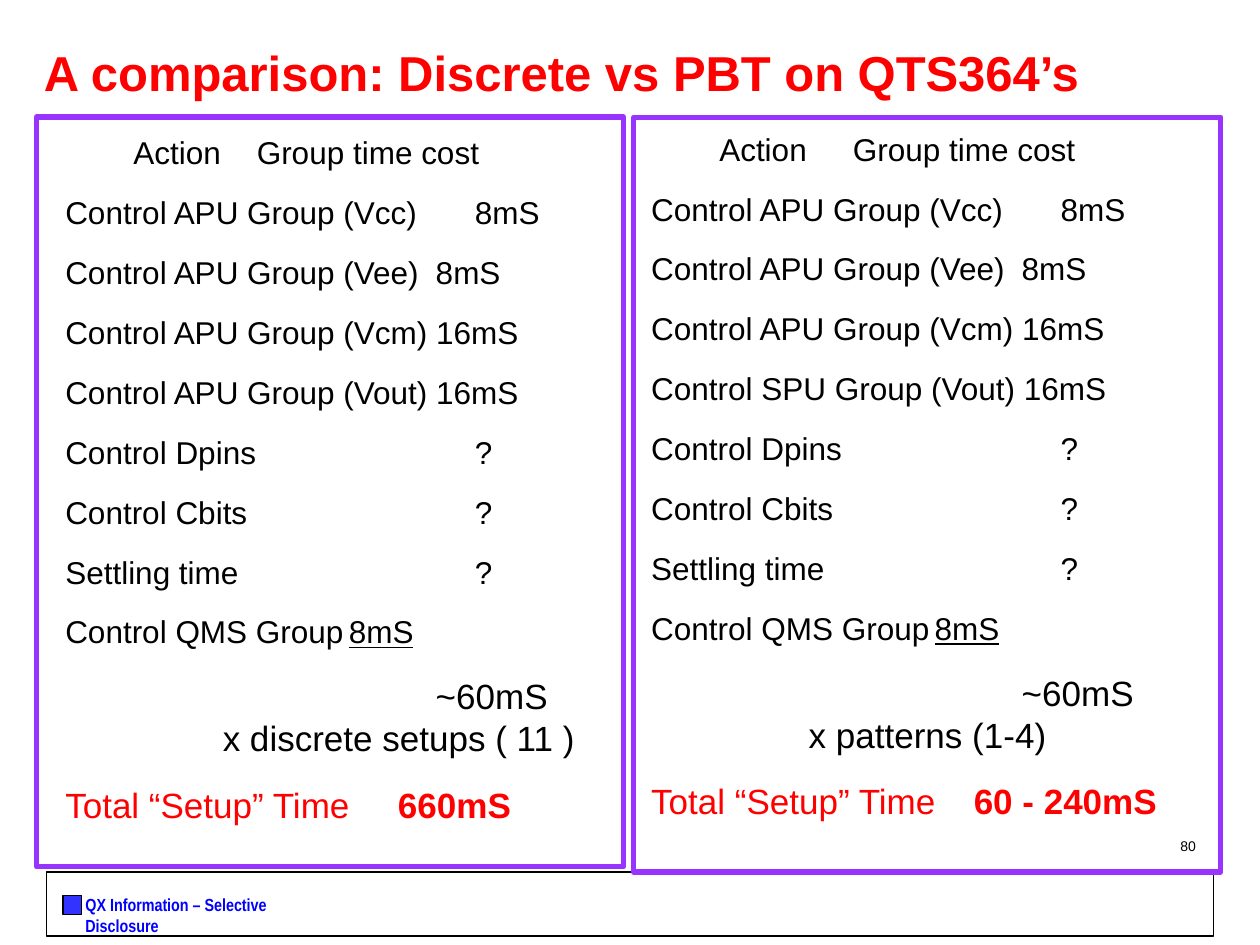
from pptx import Presentation, util as u
from pptx.dml.color import RGBColor
from pptx.enum import shapes, text
from pptx.oxml.ns import qn
from lxml import etree

COLORS = dict(red="FF0000", black="000000", purple="9933FF",
              blue="0000FF", marker="3333FF")
WIDTH, HEIGHT = u.Inches(10), u.Inches(7.5)
PANEL_STEP = 47.4
BODY = dict(size=u.Pt(18))
SUM = dict(size=u.Pt(20))
TOTAL = dict(size=u.Pt(20), color="red")


def area(x, y, w, h):
    """Turn percentages of the slide's size into lengths."""
    return [int(share * full / 100)
            for share, full in zip((x, y, w, h), (WIDTH, HEIGHT) * 2)]


def add_rect(s, box, line, points, fill=None):
    sp = s.shapes.add_shape(shapes.MSO_SHAPE.RECTANGLE, *area(*box))
    sp.shadow.inherit = False
    if fill:
        sp.fill.solid()
        sp.fill.fore_color.rgb = RGBColor.from_string(COLORS[fill])
    else:
        sp.fill.background()
    sp.line.color.rgb = RGBColor.from_string(COLORS[line])
    sp.line.width = u.Pt(points)


def add_frame(s, box):
    tf = s.shapes.add_textbox(*area(*box)).text_frame
    tf.word_wrap = True
    return tf


def add_run(p, words, color="black", **formats):
    r = p.add_run()
    r.text = words
    for name, value in {"name": "Arial", **formats}.items():
        setattr(r.font, name, value)
    r.font.color.rgb = RGBColor.from_string(COLORS[color])


def set_tabs(p, stops):
    """Put left tab stops at percentages of the slide's width."""
    tabs = etree.SubElement(p._p.get_or_add_pPr(), qn("a:tabLst"))
    for stop in stops:
        etree.SubElement(tabs, qn("a:tab"), pos=str(int(stop * WIDTH / 100)), algn="l")


def add_line(tf, stops, parts, first=False):
    """Add a paragraph of (words, format) parts; None is a line break."""
    p = tf.paragraphs[0] if first else tf.add_paragraph()
    set_tabs(p, stops)
    if not first:
        p.space_before = u.Pt(0.7 * parts[0][1]["size"].pt)
    for part in parts:
        if part is None:
            p.add_line_break()
        else:
            add_run(p, part[0], **part[1])


def add_panel(s, box, cost_stop, vout_unit, setups, total, total_stop):
    tf = add_frame(s, box)
    add_line(tf, [5.4, cost_stop], [("\tAction\tGroup time cost", BODY)], first=True)
    rows = ["Control APU Group (Vcc)\t8mS",
            "Control APU Group (Vee)\t8mS",
            "Control APU Group (Vcm) 16mS",
            f"Control {vout_unit} Group (Vout) 16mS",
            "Control Dpins\t?",
            "Control Cbits\t?",
            "Settling time\t?"]
    for row in rows:
        add_line(tf, [29.4 if "Vee" in row else 32.5], [(row, BODY)])
    add_line(tf, [22.5], [("Control QMS Group\t", BODY),
                          ("8mS", {**BODY, "underline": True})])
    add_line(tf, [12.5, 29.4], [("\t\t~60mS", SUM), None, (f"\tx {setups}", SUM)])
    add_line(tf, [total_stop], [("Total “Setup” Time\t", TOTAL),
                                (total, {**TOTAL, "bold": True})])


def add_footer(s):
    add_rect(s, (3.7, 92.27, 92.6, 6.8), "black", 0.75)
    tf = add_frame(s, (5.8, 94, 19, 3.6))
    add_run(tf.paragraphs[0], "QX Information – Selective Disclosure", "blue",
            name="Arial Narrow", size=u.Pt(10), bold=True)
    add_rect(s, (5, 94.8, 1.5, 2), "black", 0.75, "marker")


def add_title(s):
    tf = add_frame(s, (2.5, 2.13, 92.5, 11.87))
    tf.vertical_anchor = text.MSO_ANCHOR.MIDDLE
    p = tf.paragraphs[0]
    p.line_spacing = 0.85
    add_run(p, "A comparison: Discrete vs PBT on QTS364’s", "red",
            size=u.Pt(28), bold=True)


def add_page_number(s):
    p = add_frame(s, (72.6, 88, 23.3, 3.07)).paragraphs[0]
    p.alignment = text.PP_ALIGN.RIGHT
    add_run(p, "80", size=u.Pt(8))


def main():
    prs = Presentation()
    prs.slide_width, prs.slide_height = WIDTH, HEIGHT
    s = prs.slides.add_slide(prs.slide_layouts[6])
    add_footer(s)
    add_title(s)
    add_panel(s, (4.2, 13.47, 43.3, 78.13), 15.2, "APU",
              "discrete setups ( 11 )", "660mS", 26.4)
    add_panel(s, (50.7, 13.07, 45.2, 78.8), 16, "SPU",
              "patterns (1-4)", "60 - 240mS", 25.6)
    for col, height in enumerate((79.33, 79.87)):
        add_rect(s, (2.9 + col * PANEL_STEP, 12.4, 46.6, height), "purple", 3)
    add_page_number(s)
    prs.save("out.pptx")


if __name__ == "__main__":
    main()
